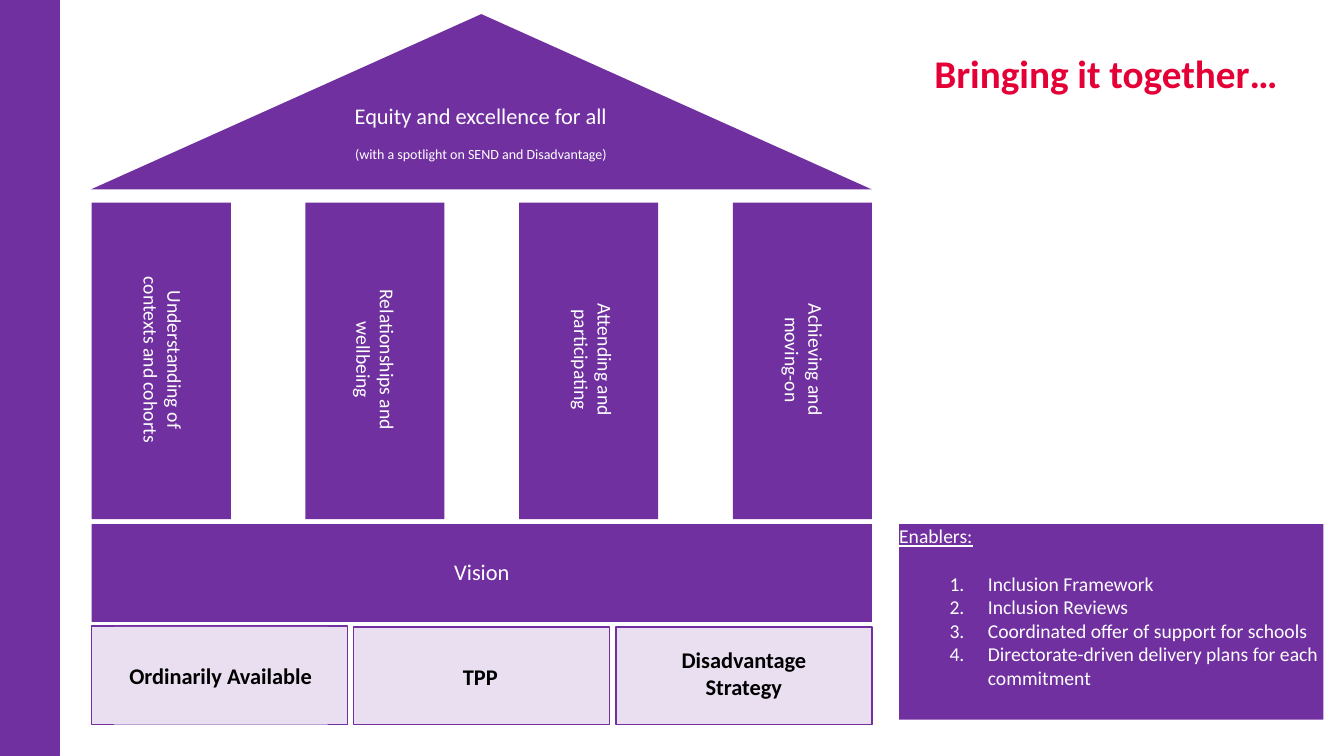
from dataclasses import dataclass
from typing import NamedTuple

from lxml.etree import SubElement
from pptx import Presentation
from pptx.dml.color import RGBColor
from pptx.enum.shapes import MSO_SHAPE as Shape
from pptx.enum.text import MSO_ANCHOR as Anchor, PP_ALIGN as Align
from pptx.oxml.ns import qn
from pptx.util import Inches, Pt

CELL = 0.1
COLS, ROWS = 133.33, 75
PURPLE, LILAC, RED, WHITE, BLACK = "7030A0", "E9DFF0", "E40037", "FFFFFF", "000000"
LEFT, HOUSE_W = 9.1, 77.4


class Box(NamedTuple):
    col: float
    row: float
    cols: float
    rows: float


@dataclass
class Pillar:
    lines: list[str]
    centre: float
    depth: float
    fill: str | None = PURPLE


@dataclass
class Foundation:
    row: float
    rows: float
    text: str
    label: Box
    fill: str | None = LILAC


PILLARS = [
    Pillar(["Understanding of", "contexts and cohorts"], 16.2, 5.6, None),
    Pillar(["Relationships and", "wellbeing"], 37.3, 11.3),
    Pillar(["Attending and", "participating"], 58.9, 10.5),
    Pillar(["Achieving and", "moving-on"], 79.8, 5.6),
]
FOUNDATIONS = [
    Foundation(62.1, 9.8, "Ordinarily Available", Box(11.3, 62.2, 21.2, 9.7)),
    Foundation(62.2, 9.7, "TPP", Box(40.5, 62.7, 14.3, 8.8), None),
    Foundation(62.2, 9.7, "Disadvantage Strategy", Box(64.2, 62.4, 19.2, 8.8)),
]
ENABLERS = [
    "Inclusion Framework",
    "Inclusion Reviews",
    "Coordinated offer of support for schools",
    "Directorate-driven delivery plans for each commitment",
]


def cells(n: float) -> int:
    return Inches(n * CELL)


def color(value: str) -> RGBColor:
    return RGBColor.from_string(value)


def add_box(slide, box: Box, fill: str | None = PURPLE, line: float = 0, kind=Shape.RECTANGLE):
    place = [cells(n) for n in box]
    if fill is None:
        return slide.shapes.add_textbox(*place)
    sp = slide.shapes.add_shape(kind, *place)
    sp.shadow.inherit = False
    sp.fill.solid()
    sp.fill.fore_color.rgb = color(fill)
    if line:
        sp.line.color.rgb = color(PURPLE)
        sp.line.width = Pt(line)
    else:
        sp.line.fill.background()
    return sp


def set_frame(sp, anchor=Anchor.MIDDLE, wrap: bool = False):
    tf = sp.text_frame
    tf.margin_left = tf.margin_top = tf.margin_right = tf.margin_bottom = 0
    tf.vertical_anchor = anchor
    tf.word_wrap = wrap
    return tf


def add_text(tf, text: str, size: float, hue: str = WHITE, bold: bool = False,
             underline: bool = False, align=Align.CENTER, before: float = 0,
             numbered: bool = False) -> None:
    p = tf.paragraphs[0]
    if p.runs:
        p = tf.add_paragraph()
    p.alignment = align
    if before:
        p.space_before = Pt(before)
    if numbered:
        p.level = 1
        pPr = p._p.get_or_add_pPr()
        pPr.set("marL", str(Inches(0.88)))
        pPr.set("indent", str(Inches(-0.38)))
        SubElement(pPr, qn("a:buAutoNum"), type="arabicPeriod")
    r = p.add_run()
    r.text = text
    r.font.name = "Calibri"
    r.font.size = Pt(size)
    r.font.bold = bold
    r.font.underline = underline
    r.font.color.rgb = color(hue)


def draw_roof(slide) -> None:
    add_box(slide, Box(9, 1.4, 77.5, 17.4), kind=Shape.ISOSCELES_TRIANGLE)
    tf = set_frame(add_box(slide, Box(33.6, 10.3, 28.2, 5.6), None))
    add_text(tf, "Equity and excellence for all", 16)
    add_text(tf, "(with a spotlight on SEND and Disadvantage)", 10, before=12.2)


def draw_pillars(slide) -> None:
    width, length, middle = 13.8, 28.2, 35.7
    pitch = (HOUSE_W - width) / (len(PILLARS) - 1)
    for i, pillar in enumerate(PILLARS):
        add_box(slide, Box(LEFT + i * pitch, 20.1, width, 31.4))
        label = Box(pillar.centre - length / 2, middle - pillar.depth / 2, length, pillar.depth)
        sp = add_box(slide, label, pillar.fill)
        sp.rotation = 90
        tf = set_frame(sp)
        for line in pillar.lines:
            add_text(tf, line, 14)


def draw_base(slide) -> None:
    add_box(slide, Box(LEFT, 52, HOUSE_W, 9.7))
    tf = set_frame(add_box(slide, Box(33.7, 53.9, 28.2, 5.6), None))
    add_text(tf, "Vision", 16)
    width = 25.4
    pitch = (HOUSE_W - width) / (len(FOUNDATIONS) - 1)
    for i, part in enumerate(FOUNDATIONS):
        add_box(slide, Box(LEFT + i * pitch, part.row, width, part.rows), LILAC, line=1)
        tf = set_frame(add_box(slide, part.label, part.fill), wrap=True)
        add_text(tf, part.text, 16, BLACK, bold=True)


def draw_enablers(slide) -> None:
    tf = set_frame(add_box(slide, Box(89.2, 52, 42.1, 19.4)), Anchor.TOP, wrap=True)
    add_text(tf, "Enablers:", 14, underline=True, align=Align.LEFT)
    for i, item in enumerate(ENABLERS):
        add_text(tf, item, 14, align=Align.LEFT, before=0 if i else 17, numbered=True)


def draw_title(slide) -> None:
    tf = set_frame(add_box(slide, Box(92.7, 4.9, 37, 24.8), None), Anchor.TOP, wrap=True)
    add_text(tf, "Bringing it together…", 28, RED, bold=True, align=Align.LEFT)


def main() -> None:
    prs = Presentation()
    prs.slide_width, prs.slide_height = cells(COLS), cells(ROWS)
    slide = prs.slides.add_slide(prs.slide_layouts[6])
    draw_roof(slide)
    draw_pillars(slide)
    draw_base(slide)
    draw_enablers(slide)
    draw_title(slide)
    add_box(slide, Box(0, 0, 5.9, ROWS), line=0.75)
    prs.save("out.pptx")


if __name__ == "__main__":
    main()
